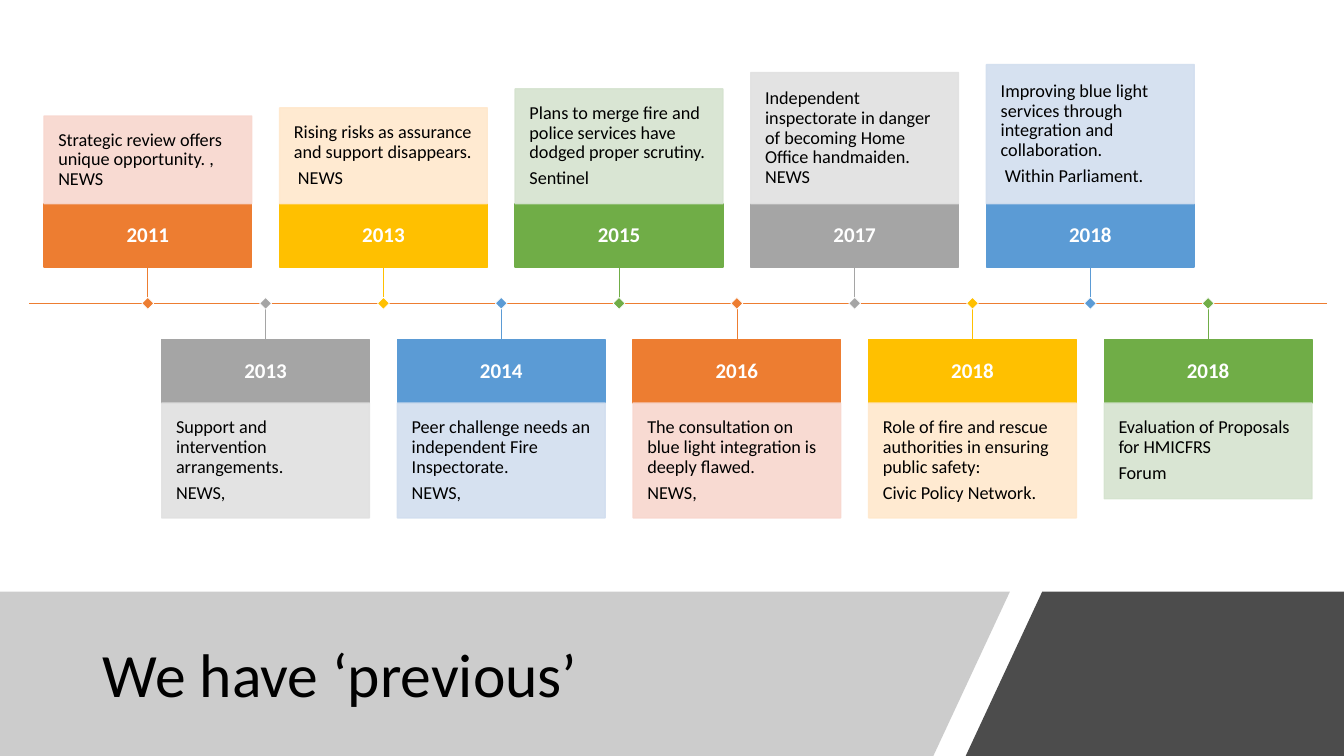
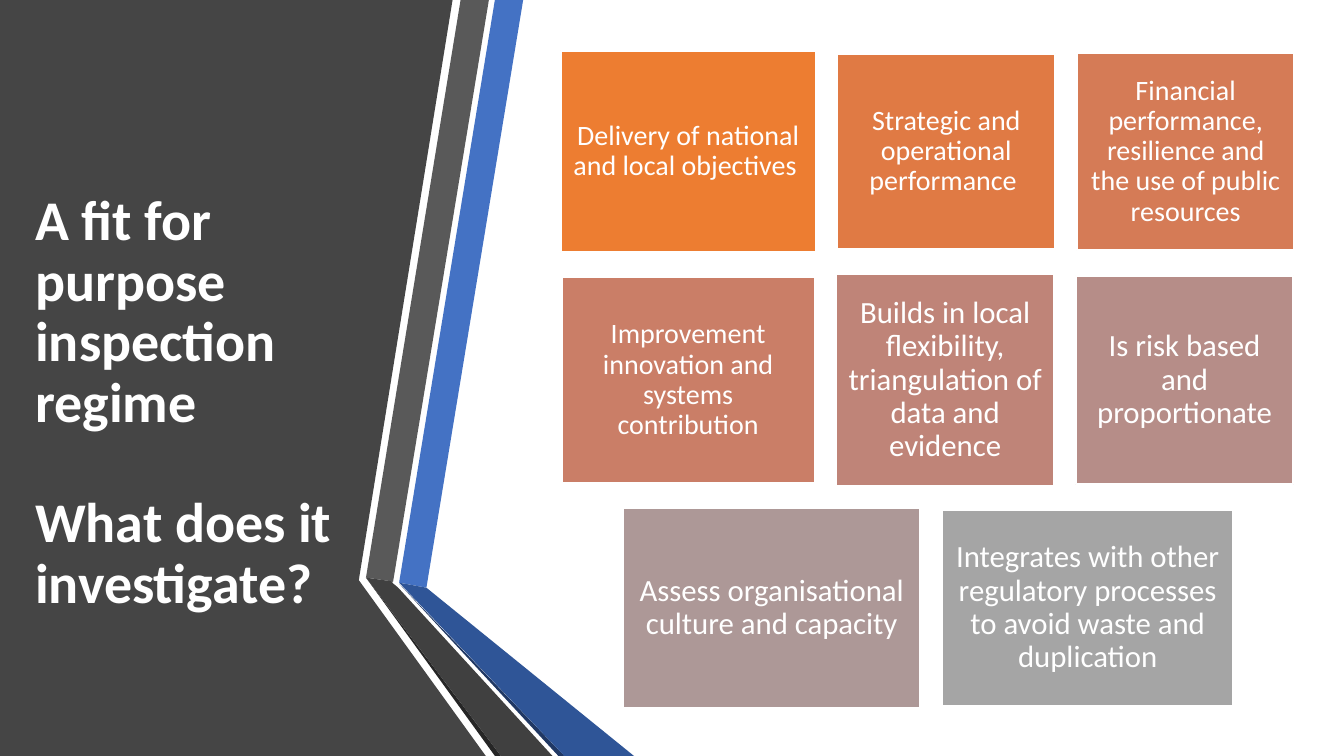
import itertools

import pptx
import pptx.dml.color
import pptx.enum.shapes
import pptx.enum.text
import pptx.oxml
import pptx.oxml.ns
import pptx.util
from lxml import etree

Pt = pptx.util.Pt
qn = pptx.oxml.ns.qn
Align = pptx.enum.text.PP_ALIGN
RECT = pptx.enum.shapes.MSO_SHAPE.RECTANGLE

WIDE, HIGH = 960, 540
FONT = "Calibri"
BLACK, WHITE = "000000", "FFFFFF"
BAND_TOP = 422.6

# Timeline: events alternate above and below the axis
AXIS = 216.7
STEM = 26
YEAR_H = 45.2
CARD_W = 148.4
LEFT, STEP = 31.4, 84.15
DOT = 6
HUES = [
    ("ED7D31", "F8D7CE"),
    ("A5A5A5", "E1E1E1"),
    ("FFC000", "FFE8CC"),
    ("5B9BD5", "D2DEEF"),
    ("70AD47", "D5E3CF"),
]
# year, height of the note, text of the note
EVENTS = [
    ("2011", 62.6, "Strategic review offers unique opportunity. , NEWS"),
    ("2013", 82, "Support and intervention arrangements.\nNEWS,"),
    ("2013", 68.4, "Rising risks as assurance and support disappears.\n NEWS"),
    ("2014", 82, "Peer challenge needs an independent Fire Inspectorate.\nNEWS,"),
    ("2015", 82, "Plans to merge fire and police services have dodged proper "
                 "scrutiny.\nSentinel"),
    ("2016", 82, "The consultation on blue light integration is deeply flawed."
                 "\nNEWS,"),
    ("2017", 93.6, "Independent inspectorate in danger of becoming Home Office "
                   "handmaiden. NEWS"),
    ("2018", 82, "Role of fire and rescue authorities in ensuring public "
                 "safety:\nCivic Policy Network."),
    ("2018", 99.4, "Improving blue light services through integration and "
                   "collaboration.\n Within Parliament."),
    ("2018", 68.4, "Evaluation of Proposals for HMICFRS\nForum"),
]

# Tiles: each row has its left edge, middle height and tiles
TILE_GAP = 15.5
ROWS = [
    (400.5, 108.2, [
        (182.2, 144, "ED7D31", 20, "Delivery of national and local objectives "),
        (155.5, 139.7, "E07A44", 20, "Strategic and operational performance "),
        (155.5, 141.1, "D57B56", 20,
         "Financial performance, resilience and the use of public resources"),
    ]),
    (401.2, 271.6, [
        (180.7, 147.6, "CA7E67", 20,
         "Improvement innovation and systems contribution"),
        (155.5, 151.2, "BF8478", 22,
         "Builds in local flexibility, triangulation of data and evidence"),
        (155.5, 149, "B68D88", 22, "Is risk based and proportionate"),
    ]),
    (445, 434.2, [
        (212.4, 142.6, "AD9897", 22, "Assess organisational culture and capacity"),
        (208.1, 139.7, "A5A5A5", 22,
         "Integrates with other regulatory processes to avoid waste and duplication"),
    ]),
]

# Angled ribbons beside the dark panel
RIBBONS = [
    ("4472C4", [(285.1, 416.2), (304.6, 419.8), (373.7, 0), (353.5, 0)]),
    ("595959", [(349.2, 0), (329, 0), (261.4, 412.6), (280.8, 415.4)]),
    ("262626", [(261.4, 412.6), (353.5, HIGH), (357.8, HIGH)]),
    ("203864", [(285.1, 416.9), (398.9, HIGH), (403.2, HIGH)]),
    ("2F5597", [(285.1, 416.2), (403.2, HIGH), (452.9, HIGH), (304.6, 419.8)]),
    ("404040", [(394.6, HIGH), (284.4, 419.8), (280.1, 416.2), (280.8, 415.4),
                (261.4, 412.6), (357.8, HIGH)]),
]
PANEL = [(0, 0), (323.3, 0), (256.3, 414.4), (347, HIGH), (0, HIGH)]


def rgb(code):
    return pptx.dml.color.RGBColor.from_string(code)


def paint(shape, fill, line=None, width=1, alpha=100):
    """Set fill and outline; alpha is the opacity of both in percent."""
    shape.shadow.inherit = False
    shape.fill.solid()
    shape.fill.fore_color.rgb = rgb(fill)
    if line:
        shape.line.color.rgb = rgb(line)
        shape.line.width = Pt(width)
    else:
        shape.line.fill.background()
    if alpha < 100:
        for clr in list(shape.element.spPr.iter(qn("a:srgbClr"))):
            etree.SubElement(clr, qn("a:alpha")).set("val", str(alpha * 1000))


def write(frame, text, size, color, bold=False, align=Align.LEFT, after=0):
    frame.text = text
    frame.word_wrap = True
    frame.auto_size = pptx.enum.text.MSO_AUTO_SIZE.NONE
    frame.vertical_anchor = pptx.enum.text.MSO_ANCHOR.MIDDLE
    for para in frame.paragraphs:
        para.alignment = align
        para.line_spacing = 0.9
        para.space_before = Pt(0)
        para.space_after = Pt(after)
        for run in para.runs:
            run.font.name = FONT
            run.font.size = Pt(size)
            run.font.bold = bold
            run.font.color.rgb = rgb(color)


def add_box(slide, x, y, w, h):
    return slide.shapes.add_shape(RECT, Pt(x), Pt(y), Pt(w), Pt(h))


def fill_box(box, text, size, color, inset, **style):
    frame = box.text_frame
    frame.margin_left = frame.margin_right = Pt(inset)
    frame.margin_top = frame.margin_bottom = Pt(inset)
    write(frame, text, size, color, after=round(size * 0.35, 1), **style)


def add_line(slide, x1, y1, x2, y2, color, width):
    line = slide.shapes.add_connector(
        pptx.enum.shapes.MSO_CONNECTOR.STRAIGHT, Pt(x1), Pt(y1), Pt(x2), Pt(y2))
    line.line.color.rgb = rgb(color)
    line.line.width = Pt(width)
    etree.SubElement(line.element.spPr, qn("a:effectLst"))


def add_area(slide, points, color, alpha=100):
    spots = [(Pt(x), Pt(y)) for x, y in points]
    pen = slide.shapes.build_freeform(*spots[0])
    pen.add_line_segments(spots[1:], close=True)
    paint(pen.convert_to_shape(), color, alpha=alpha)


def set_title(slide, text, x, y, w, h, size, color, bold=False):
    """Fill the title and lift it above what is drawn so far."""
    title = slide.shapes.title
    title.left, title.top, title.width, title.height = Pt(x), Pt(y), Pt(w), Pt(h)
    write(title.text_frame, text, size, color, bold)
    title.element.getparent().append(title.element)
    return title


def add_event(slide, order, event, hue):
    year, tall, note = event
    dark, pale = hue
    x = LEFT + order * STEP
    mid = x + CARD_W / 2
    if order % 2 == 0:
        end = AXIS - STEM
        top = end - YEAR_H
        note_top = top - tall
    else:
        end = top = AXIS + STEM
        note_top = top + YEAR_H
    head = add_box(slide, x, top, CARD_W, YEAR_H)
    paint(head, dark, dark)
    fill_box(head, year, 15, WHITE, 5.7, bold=True, align=Align.CENTER)
    body = add_box(slide, x, note_top, CARD_W, tall)
    paint(body, pale, pale, alpha=90)
    fill_box(body, note, 13, BLACK, 10.2)
    add_line(slide, mid, AXIS, mid, end, dark, 0.5)
    dot = add_box(slide, mid - DOT / 2, AXIS - DOT / 2, DOT, DOT)
    dot.rotation = 45
    paint(dot, dark, WHITE, 0.5)


def add_row(slide, x, mid, tiles):
    for w, h, color, size, text in tiles:
        tile = add_box(slide, x, mid - h / 2, w, h)
        paint(tile, color, WHITE, 1.5)
        fill_box(tile, text, size, WHITE, size * 0.3, align=Align.CENTER)
        x += w + TILE_GAP


def draw_past(slide):
    add_area(slide, [(0, BAND_TOP), (721.4, BAND_TOP), (666.7, HIGH), (0, HIGH)],
             "808080", 40)
    add_area(slide, [(744.5, BAND_TOP), (WIDE, BAND_TOP), (WIDE, HIGH),
                     (689.8, HIGH)], BLACK, 70)
    set_title(slide, "We have ‘previous’", 66.2, 447.1, 607.7, 74.2, 44, BLACK)
    add_line(slide, 20.9, AXIS, 948.2, AXIS, HUES[0][0], 1)
    for order, (event, hue) in enumerate(zip(EVENTS, itertools.cycle(HUES))):
        add_event(slide, order, event, hue)


def draw_scope(slide):
    add_area(slide, PANEL, "454545")
    for color, points in RIBBONS:
        add_area(slide, points, color)
    title = set_title(
        slide, "A fit for purpose inspection regime\nWhat does it investigate?",
        18, 92.9, 242.6, 391, 40, WHITE, True)
    title.text_frame.paragraphs[1].space_before = Pt(43)
    for row in ROWS:
        add_row(slide, *row)


def main():
    deck = pptx.Presentation()
    deck.slide_width, deck.slide_height = Pt(WIDE), Pt(HIGH)
    for draw in (draw_past, draw_scope):
        draw(deck.slides.add_slide(deck.slide_layouts[5]))
    deck.save("out.pptx")


if __name__ == "__main__":
    main()
